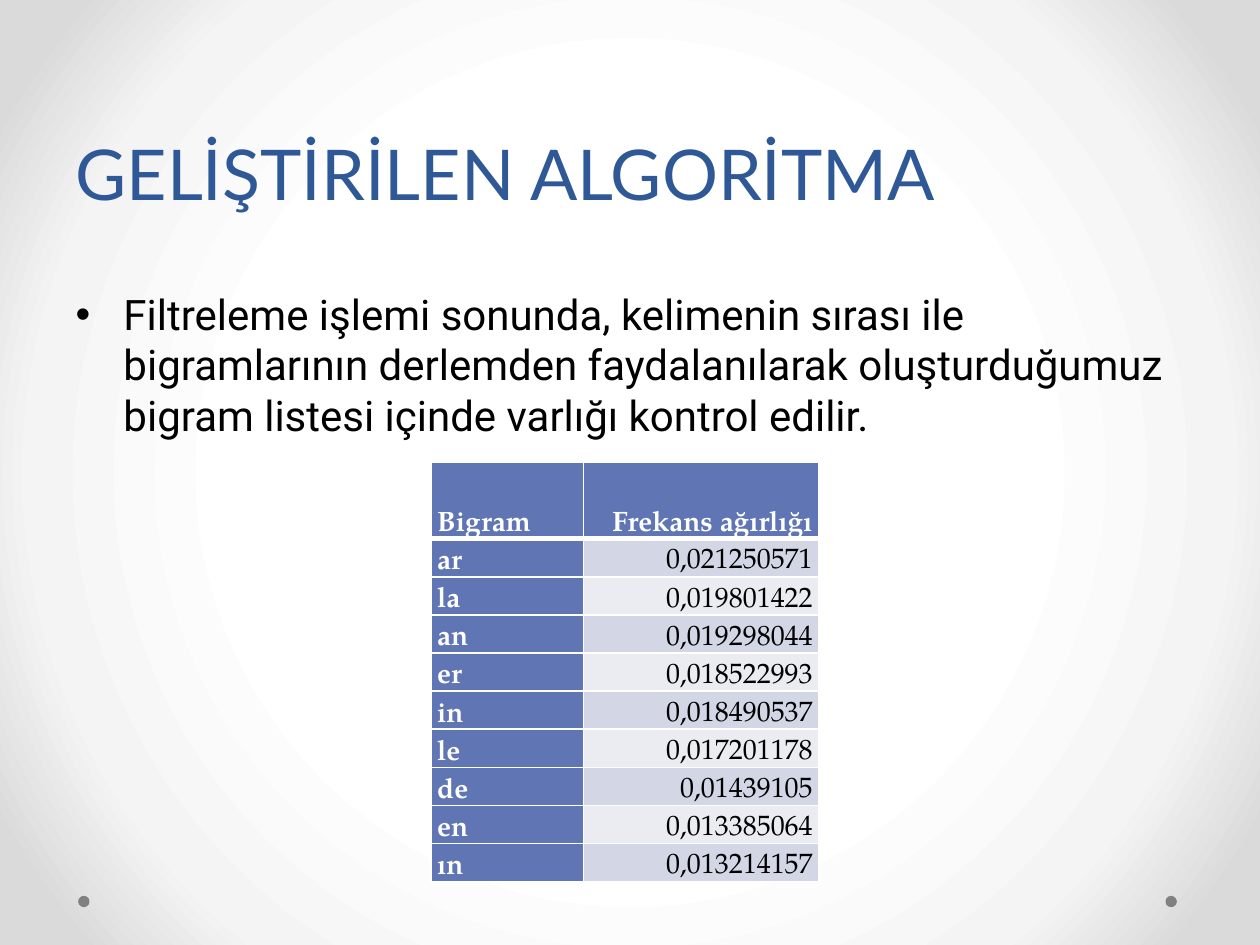
from lxml.etree import SubElement
from pptx import Presentation
from pptx.dml.color import RGBColor
from pptx.enum.shapes import MSO_SHAPE
from pptx.enum.text import MSO_ANCHOR, MSO_AUTO_SIZE, PP_ALIGN
from pptx.oxml import parse_xml
from pptx.oxml.ns import nsdecls, qn
from pptx.util import Inches, Pt

BLUE = RGBColor(0x2F, 0x58, 0x97)
HEADER = RGBColor(0x60, 0x76, 0xB4)
BANDS = (RGBColor(0xD2, 0xD6, 0xE5), RGBColor(0xEA, 0xEC, 0xF2))
WHITE = RGBColor(0xFF, 0xFF, 0xFF)
BLACK = RGBColor(0, 0, 0)
GRAY = RGBColor(0x80, 0x80, 0x80)
STOPS = ((50, WHITE), (76, RGBColor(0xF4, 0xF4, 0xF4)), (92, RGBColor(0xDA, 0xDA, 0xDA)))

TITLE = "GELİŞTİRİLEN ALGORİTMA"
BODY = ("Filtreleme işlemi sonunda, kelimenin sırası ile bigramlarının derlemden "
        "faydalanılarak oluşturduğumuz bigram listesi içinde varlığı kontrol edilir.")
ROWS = [
    ("Bigram", "Frekans ağırlığı"),
    ("ar", "0,021250571"),
    ("la", "0,019801422"),
    ("an", "0,019298044"),
    ("er", "0,018522993"),
    ("in", "0,018490537"),
    ("le", "0,017201178"),
    ("de", "0,01439105"),
    ("en", "0,013385064"),
    ("ın", "0,013214157"),
]


def set_background(s):
    stops = "".join(f'<a:gs pos="{pos * 1000}"><a:srgbClr val="{color}"/></a:gs>'
                    for pos, color in STOPS)
    s.element.cSld.insert(0, parse_xml(
        f'<p:bg {nsdecls("p", "a")}><p:bgPr><a:gradFill rotWithShape="1">'
        f'<a:gsLst>{stops}</a:gsLst><a:path path="circle">'
        '<a:fillToRect l="50000" t="50000" r="50000" b="50000"/></a:path>'
        '</a:gradFill><a:effectLst/></p:bgPr></p:bg>'))


def add_dots(s, lefts, top, size):
    for left in lefts:
        sp = s.shapes.add_shape(MSO_SHAPE.OVAL, Inches(left), Inches(top),
                                Inches(size), Inches(size))
        sp.shadow.inherit = False
        sp.fill.solid()
        sp.fill.fore_color.rgb = GRAY
        sp.line.fill.background()


def format_runs(p, font, size, color, bold=False):
    for r in p.runs:
        r.font.name = font
        r.font.size = Pt(size)
        r.font.color.rgb = color
        r.font.bold = bold


def fill_placeholder(sp, box, text, anchor):
    sp.left, sp.top, sp.width, sp.height = map(Inches, box)
    tf = sp.text_frame
    tf.text = text
    tf.word_wrap = True
    tf.auto_size = MSO_AUTO_SIZE.NONE
    tf.vertical_anchor = anchor
    return tf.paragraphs[0]


def add_title(s, *box):
    p = fill_placeholder(s.shapes.title, box, TITLE, MSO_ANCHOR.BOTTOM)
    p.alignment = PP_ALIGN.LEFT
    p.line_spacing = Pt(58)
    format_runs(p, "Lato", 40, BLUE)


def add_body(s, *box):
    sp = s.placeholders[1]
    p = fill_placeholder(sp, box, BODY, MSO_ANCHOR.TOP)
    sp.text_frame.margin_top = Inches(0.54)
    p.space_before = Pt(0)
    pPr = p._p.get_or_add_pPr()
    pPr.set("marL", str(Inches(0.38)))
    pPr.set("indent", str(-Inches(0.38)))
    SubElement(pPr, qn("a:buFont"), typeface="Arial")
    SubElement(pPr, qn("a:buChar"), char="•")
    format_runs(p, "Roboto", 24, BLACK)


def set_borders(cell, header):
    tcPr = cell._tc.get_or_add_tcPr()
    for i, side in enumerate(("lnL", "lnR", "lnT", "lnB")):
        width = Pt(3) if header and side == "lnB" else Pt(1)
        tcPr.insert(i, parse_xml(
            f'<a:{side} {nsdecls("a")} w="{width}"><a:solidFill>'
            f'<a:srgbClr val="{WHITE}"/></a:solidFill></a:{side}>'))


def format_cell(cell, text, row, col):
    strong = row == 0 or col == 0
    cell.text = text
    cell.vertical_anchor = MSO_ANCHOR.BOTTOM
    cell.margin_left = cell.margin_right = Inches(0.05)
    cell.margin_top = cell.margin_bottom = 0
    cell.fill.solid()
    cell.fill.fore_color.rgb = HEADER if strong else BANDS[(row - 1) % 2]
    p = cell.text_frame.paragraphs[0]
    p.alignment = PP_ALIGN.RIGHT if col else PP_ALIGN.LEFT
    p.line_spacing = 1.15
    format_runs(p, "TeX Gyre Pagella", 16, WHITE if strong else BLACK, strong)
    set_borders(cell, row == 0)


def add_frequency_table(s, left, top, width, height):
    table = s.shapes.add_table(len(ROWS), 2, Inches(left), Inches(top),
                               Inches(width), Inches(height)).table
    table.columns[0].width = Inches(1.21)
    table.columns[1].width = Inches(width - 1.21)
    unit = height / (len(ROWS) + 1)
    for i, values in enumerate(ROWS):
        table.rows[i].height = Inches(unit if i else 2 * unit)
        for j, text in enumerate(values):
            format_cell(table.cell(i, j), text, i, j)


def main():
    prs = Presentation()
    prs.slide_width, prs.slide_height = Inches(10), Inches(7.5)
    s = prs.slides.add_slide(prs.slide_layouts[1])
    set_background(s)
    add_dots(s, (9.25, 0.62), 7.11, 0.09)
    add_title(s, 0.5, 0, 9, 1.75)
    add_body(s, 0.5, 1.75, 9, 4.95)
    add_frequency_table(s, 3.42, 3.67, 3.08, 3.33)
    prs.save("out.pptx")


if __name__ == "__main__":
    main()
